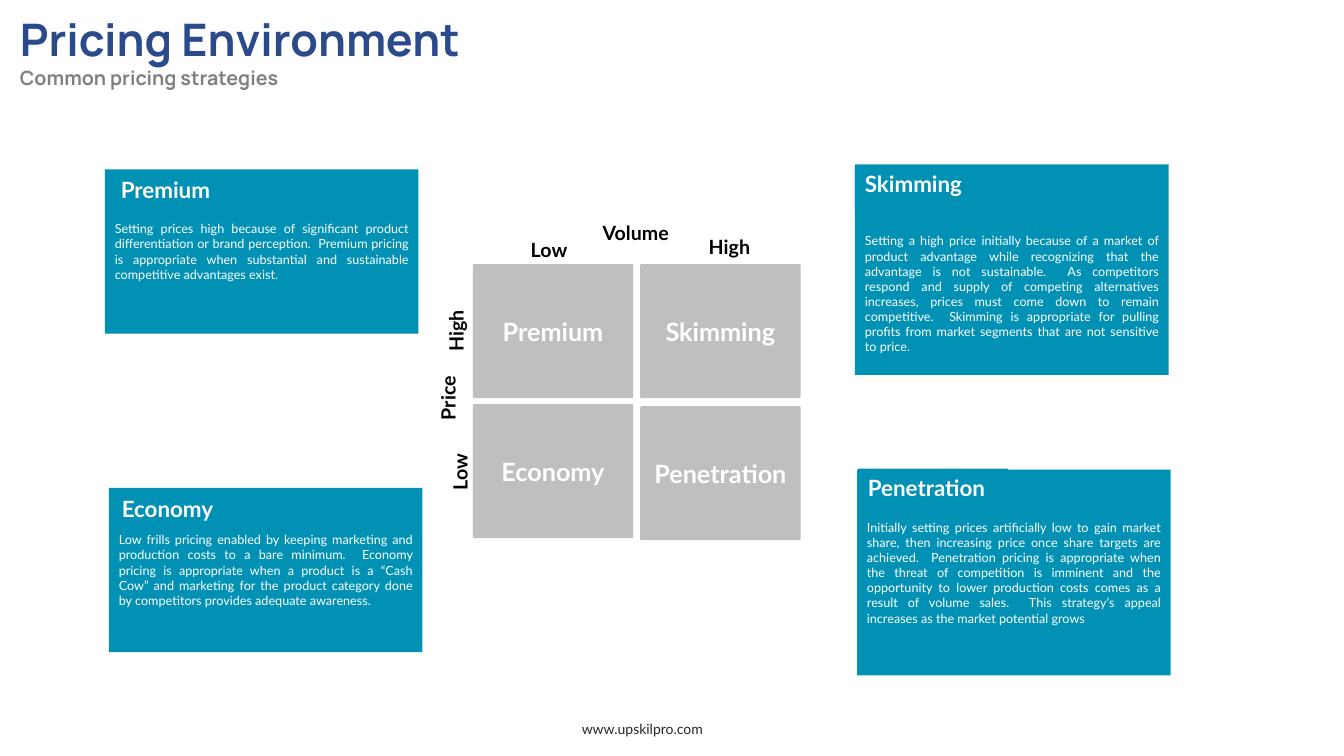
import pptx
import pptx.util
import pptx.dml.color
import pptx.enum.shapes
import pptx.enum.text

Inches = pptx.util.Inches
RGBColor = pptx.dml.color.RGBColor
SHAPE = pptx.enum.shapes.MSO_SHAPE
ALIGN = pptx.enum.text.PP_ALIGN
ANCHOR = pptx.enum.text.MSO_ANCHOR

WHITE = RGBColor(0xFF, 0xFF, 0xFF)
BLACK = RGBColor(0x00, 0x00, 0x00)
TEAL = RGBColor(0x00, 0x91, 0xB5)
SILVER = RGBColor(0xBF, 0xBF, 0xBF)
NAVY = RGBColor(0x2A, 0x4A, 0x8B)
GRAY = RGBColor(0x80, 0x80, 0x80)
CHARCOAL = RGBColor(0x27, 0x27, 0x27)


def add_box(kind, left, top, width, height, fill=None):
    box = [Inches(v) for v in (left, top, width, height)]
    if kind is None:
        sp = s.shapes.add_textbox(*box)
    else:
        sp = s.shapes.add_shape(kind, *box)
        sp.shadow.inherit = False
        sp.fill.solid()
        sp.fill.fore_color.rgb = fill
        sp.line.fill.background()
    sp.text_frame.word_wrap = True
    sp.text_frame.vertical_anchor = ANCHOR.TOP
    return sp


def add_run(p, text, size, color, bold=False, font="Lato", align=ALIGN.LEFT):
    p.alignment = align
    r = p.add_run()
    r.text = text
    r.font.name = font
    r.font.size = pptx.util.Pt(size)
    r.font.bold = bold
    r.font.color.rgb = color


prs = pptx.Presentation()
prs.slide_width = Inches(13.33)
prs.slide_height = Inches(7.5)
s = prs.slides.add_slide(prs.slide_layouts[6])

cells = [
    ("Economy", 4.69, 4.01),
    ("Skimming", 6.35, 2.62),
    ("Penetration", 6.35, 4.03),
    ("Premium", 4.69, 2.62),
]
for name, left, top in cells:
    sp = add_box(SHAPE.ROUNDED_RECTANGLE, left, top, 1.59, 1.33, SILVER)
    sp.adjustments[0] = 0.01
    tf = sp.text_frame
    tf.margin_left = tf.margin_right = tf.margin_top = tf.margin_bottom = 0
    tf.vertical_anchor = ANCHOR.MIDDLE
    add_run(tf.paragraphs[0], name, 18, WHITE, True, align=ALIGN.CENTER)

axis_labels = [
    ("Low", 4.94, 2.31, 1.01, 0.21, 0),
    ("High", 6.73, 2.28, 1.01, 0.21, 0),
    ("High", 4.04, 3.16, 0.87, 0.24, 270),
    ("Low", 4.08, 4.56, 0.87, 0.24, 270),
    ("Price", 3.96, 3.83, 0.87, 0.24, 270),
    ("Volume", 5.8, 2.14, 1.01, 0.21, 0),
]
for text, left, top, width, height, rotation in axis_labels:
    sp = add_box(None, left, top, width, height)
    sp.rotation = rotation
    add_run(sp.text_frame.paragraphs[0], text, 14, BLACK, True, align=ALIGN.CENTER)

cards = [
    ("Economy", (1.08, 4.84, 3.11, 1.63), (1.11, 4.86, 1.33, 0.37), 0.05,
     "Low frills pricing enabled by keeping marketing and production costs to a bare "
     "minimum.  Economy pricing is appropriate when a product is a “Cash Cow” and "
     "marketing for the product category done by competitors provides adequate awareness."),
    ("Skimming", (8.48, 1.63, 3.11, 2.09), (8.48, 1.64, 1.33, 0.48), 0.53,
     "Setting a high price initially because of a market of product advantage while "
     "recognizing that the advantage is not sustainable.  As competitors respond and "
     "supply of competing alternatives increases, prices must come down to remain "
     "competitive.  Skimming is appropriate for pulling profits from market segments "
     "that are not sensitive to price."),
    ("Penetration", (8.5, 4.66, 3.11, 2.04), (8.51, 4.65, 1.49, 0.46), 0.05,
     "Initially setting prices artificially low to gain market share, then increasing "
     "price once share targets are achieved.  Penetration pricing is appropriate when "
     "the threat of competition is imminent and the opportunity to lower production "
     "costs comes as a result of volume sales.  This strategy’s appeal increases as "
     "the market potential grows"),
    ("Premium", (1.04, 1.68, 3.11, 1.63), (1.1, 1.7, 1.33, 0.37), 0.05,
     "Setting prices high because of significant product differentiation or brand "
     "perception.  Premium pricing is appropriate when substantial and sustainable "
     "competitive advantages exist."),
]
for name, card, heading, margin_top, text in cards:
    tf = add_box(SHAPE.RECTANGLE, *card, TEAL).text_frame
    tf.vertical_anchor = ANCHOR.MIDDLE
    tf.margin_top = Inches(margin_top)
    add_run(tf.paragraphs[0], text, 9, WHITE, align=ALIGN.JUSTIFY)
    tf = add_box(SHAPE.RECTANGLE, *heading, TEAL).text_frame
    add_run(tf.paragraphs[0], name, 16, WHITE, True)

tf = add_box(None, 0.1, 0.07, 10.53, 0.88).text_frame
add_run(tf.paragraphs[0], "Pricing Environment", 32, NAVY, True, "Manrope")
add_run(tf.add_paragraph(), "Common pricing strategies", 14, GRAY, True, "Manrope")

tf = add_box(None, 4.12, 7.1, 4.5, 0.4).text_frame
add_run(tf.paragraphs[0], "www.upskilpro.com", 10, CHARCOAL, align=ALIGN.CENTER)

prs.save("out.pptx")
